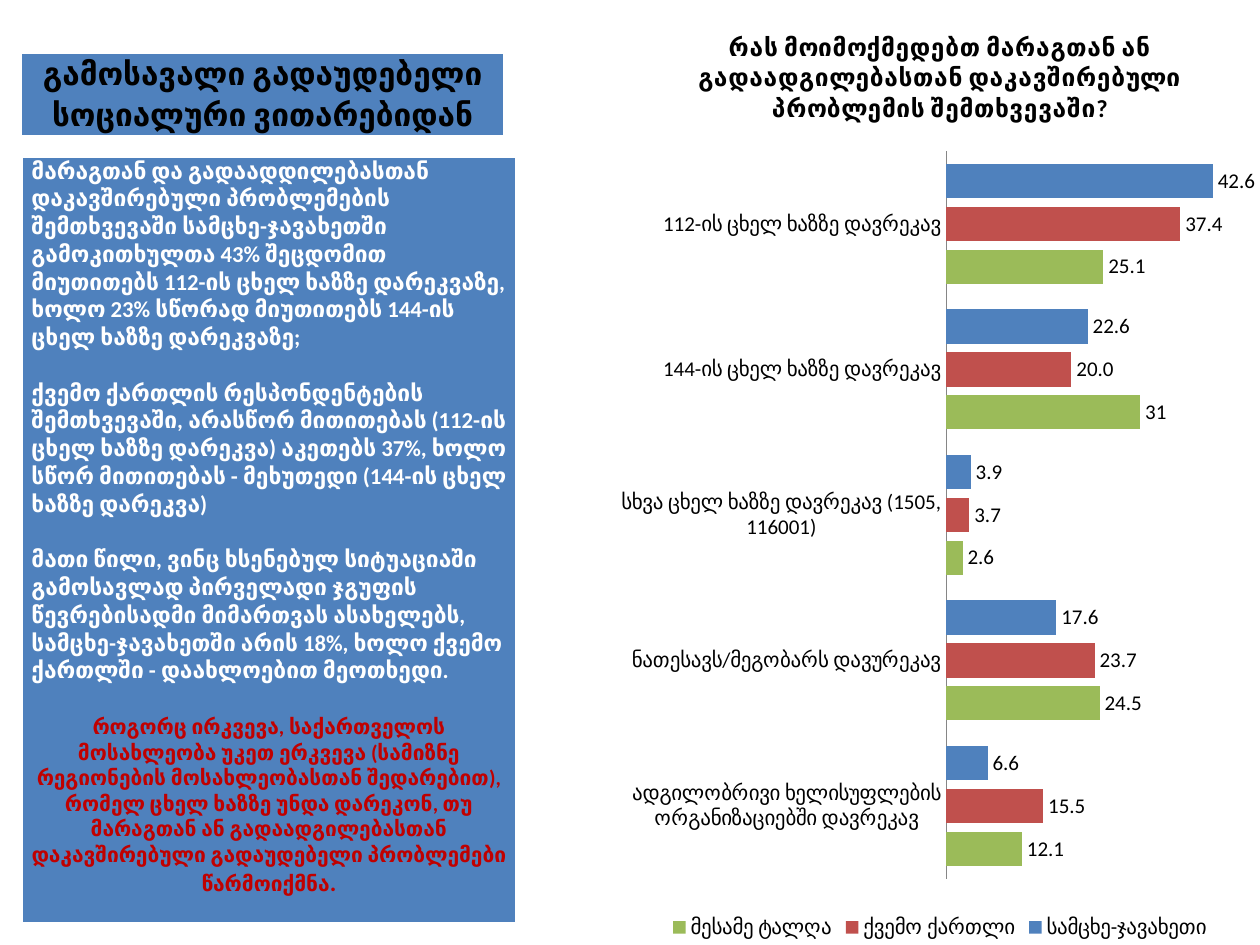
from lxml import etree
from pptx import Presentation
from pptx.chart.data import CategoryChartData
from pptx.dml.color import RGBColor
from pptx.enum.chart import XL_CHART_TYPE, XL_LABEL_POSITION, XL_LEGEND_POSITION, XL_TICK_MARK
from pptx.enum.text import PP_ALIGN
from pptx.oxml.ns import qn
from pptx.util import Inches, Pt

BAR = XL_CHART_TYPE.BAR_CLUSTERED
OUTSIDE = XL_LABEL_POSITION.OUTSIDE_END
BOTTOM = XL_LEGEND_POSITION.BOTTOM
NO_TICK = XL_TICK_MARK.NONE
LEFT, CENTER = PP_ALIGN.LEFT, PP_ALIGN.CENTER

FONT = "Calibri"
COLORS = {
    "blue": "4F81BD", "red": "C0504D", "green": "9BBB59", "axis": "868686",
    "black": "000000", "white": "FFFFFF", "alert": "C00000",
}
BORDERS = {"a:lnL": 1, "a:lnR": 1, "a:lnT": 1, "a:lnB": 3}
PLOT = {"x": 0.51, "y": 0.16, "w": 0.44, "h": 0.77}

HEADING = "გამოსავალი გადაუდებელი სოციალური ვითარებიდან"
FINDINGS = [
    "მარაგთან და გადაადდილებასთან დაკავშირებული პრობლემების შემთხვევაში "
    "სამცხე-ჯავახეთში გამოკითხულთა 43% შეცდომით მიუთითებს 112-ის ცხელ ხაზზე "
    "დარეკვაზე, ხოლო 23% სწორად მიუთითებს 144-ის ცხელ ხაზზე დარეკვაზე;",
    "ქვემო ქართლის რესპონდენტების შემთხვევაში, არასწორ მითითებას (112-ის ცხელ "
    "ხაზზე დარეკვა) აკეთებს 37%, ხოლო სწორ მითითებას - მეხუთედი (144-ის ცხელ "
    "ხაზზე დარეკვა)",
    "მათი წილი, ვინც ხსენებულ სიტუაციაში გამოსავლად პირველადი ჯგუფის "
    "წევრებისადმი მიმართვას ასახელებს, სამცხე-ჯავახეთში არის 18%, ხოლო ქვემო "
    "ქართლში - დაახლოებით მეოთხედი.",
]
CONCLUSION = (
    "როგორც ირკვევა, საქართველოს მოსახლეობა უკეთ ერკვევა (სამიზნე რეგიონების "
    "მოსახლეობასთან შედარებით), რომელ ცხელ ხაზზე უნდა დარეკონ, თუ მარაგთან ან "
    "გადაადგილებასთან დაკავშირებული გადაუდებელი პრობლემები წარმოიქმნა"
)
QUESTION = "რას მოიმოქმედებთ მარაგთან ან გადაადგილებასთან დაკავშირებული პრობლემის შემთხვევაში?"
ANSWERS = [
    "112-ის ცხელ ხაზზე დავრეკავ",
    "144-ის ცხელ ხაზზე დავრეკავ",
    "სხვა ცხელ ხაზზე დავრეკავ (1505, 116001)",
    "ნათესავს/მეგობარს დავურეკავ",
    "ადგილობრივი ხელისუფლების ორგანიზაციებში დავრეკავ",
]
SERIES = [
    ("სამცხე-ჯავახეთი", (42.6, 22.6, 3.9, 17.6, 6.6), "blue", "###0.0"),
    ("ქვემო ქართლი", (37.4, 20, 3.7, 23.7, 15.5), "red", "###0.0"),
    ("მესამე ტალღა", (25.1, 31, 2.6, 24.5, 12.1), "green", "General"),
]


def rgb(name):
    return RGBColor.from_string(COLORS[name])


def set_font(font, size, color="black", bold=False):
    for key, value in {"name": FONT, "size": Pt(size), "bold": bold}.items():
        setattr(font, key, value)
    font.color.rgb = rgb(color)


def add_borders(cell):
    tc_pr = cell._tc.get_or_add_tcPr()
    for tag, width in BORDERS.items():
        ln = etree.SubElement(tc_pr, qn(tag), w=str(Pt(width)))
        fill = etree.SubElement(ln, qn("a:solidFill"))
        etree.SubElement(fill, qn("a:srgbClr"), val=COLORS["white"])


def add_panel(s, left, top, width, height):
    box = [Inches(v) for v in (left, top, width, height)]
    table = s.shapes.add_table(1, 1, *box).table
    table.first_row = table.horz_banding = False
    cell = table.cell(0, 0)
    add_borders(cell)
    cell.fill.solid()
    cell.fill.fore_color.rgb = rgb("blue")
    margins = {"left": 0.07, "right": 0.07, "top": 0, "bottom": 0}
    for side, value in margins.items():
        setattr(cell, f"margin_{side}", Inches(value))
    return cell.text_frame


def write_paragraph(p, runs, color, align=LEFT, **spacing):
    p.alignment = align
    for key, value in spacing.items():
        setattr(p, key, value)
    for text, size in runs:
        r = p.add_run()
        r.text = text
        set_font(r.font, size, color, bold=True)


def add_findings(s):
    tf = add_panel(s, 0.18, 1.25, 3.91, 6.09)
    for i, text in enumerate(FINDINGS):
        p = tf.add_paragraph() if i else tf.paragraphs[0]
        write_paragraph(p, [(text, 13)], "white", space_before=Pt(16 if i else 0))
    write_paragraph(tf.add_paragraph(), [(CONCLUSION, 12), (".", 14)], "alert",
                    CENTER, space_before=Pt(17))


def place_plot(chart):
    plot_area = chart._chartSpace.chart.plotArea
    for old in plot_area.findall(qn("c:layout")):
        plot_area.remove(old)
    layout = etree.Element(qn("c:layout"))
    plot_area.insert(0, layout)
    manual = etree.SubElement(layout, qn("c:manualLayout"))
    settings = {"layoutTarget": "inner", "xMode": "edge", "yMode": "edge", **PLOT}
    for tag, value in settings.items():
        etree.SubElement(manual, qn(f"c:{tag}"), val=str(value))


def format_axes(chart):
    cat, val = chart.category_axis, chart.value_axis
    cat.reverse_order = True
    cat.major_tick_mark = NO_TICK
    cat.has_major_gridlines = val.has_major_gridlines = False
    cat.format.line.color.rgb = rgb("axis")
    set_font(cat.tick_labels.font, 12)
    val.minimum_scale, val.maximum_scale = 0, 45
    val.visible = False


def format_series(series, color, number_format):
    series.format.fill.solid()
    series.format.fill.fore_color.rgb = rgb(color)
    series.invert_if_negative = False
    labels = series.data_labels
    values = {"show_value": True, "number_format": number_format,
              "number_format_is_linked": False, "position": OUTSIDE}
    for key, value in values.items():
        setattr(labels, key, value)
    set_font(labels.font, 12)


def add_answers_chart(s, left, top, width, height):
    data = CategoryChartData()
    data.categories = ANSWERS
    for name, values, _, number_format in SERIES:
        data.add_series(name, values, number_format)
    box = [Inches(v) for v in (left, top, width, height)]
    chart = s.shapes.add_chart(BAR, *box, data).chart
    set_font(chart.font, 12)
    chart.has_title = True
    p = chart.chart_title.text_frame.paragraphs[0]
    write_paragraph(p, [(QUESTION, 14)], "black", CENTER)
    chart.chart_title.include_in_layout = False
    chart.has_legend = True
    chart.legend.position = BOTTOM
    chart.legend.include_in_layout = False
    set_font(chart.legend.font, 12)
    plot = chart.plots[0]
    plot.gap_width, plot.overlap, plot.vary_by_categories = 75, -25, False
    for series, (_, _, color, number_format) in zip(plot.series, SERIES):
        format_series(series, color, number_format)
    format_axes(chart)
    place_plot(chart)


def main():
    prs = Presentation()
    prs.slide_width, prs.slide_height = Inches(10), Inches(7.5)
    s = prs.slides.add_slide(prs.slide_layouts[6])
    add_answers_chart(s, 4.92, 0, 5.08, 7.5)
    tf = add_panel(s, 0.17, 0.42, 3.83, 0.67)
    write_paragraph(tf.paragraphs[0], [(HEADING, 18)], "black", CENTER, line_spacing=1.07)
    add_findings(s)
    prs.save("out.pptx")


if __name__ == "__main__":
    main()
